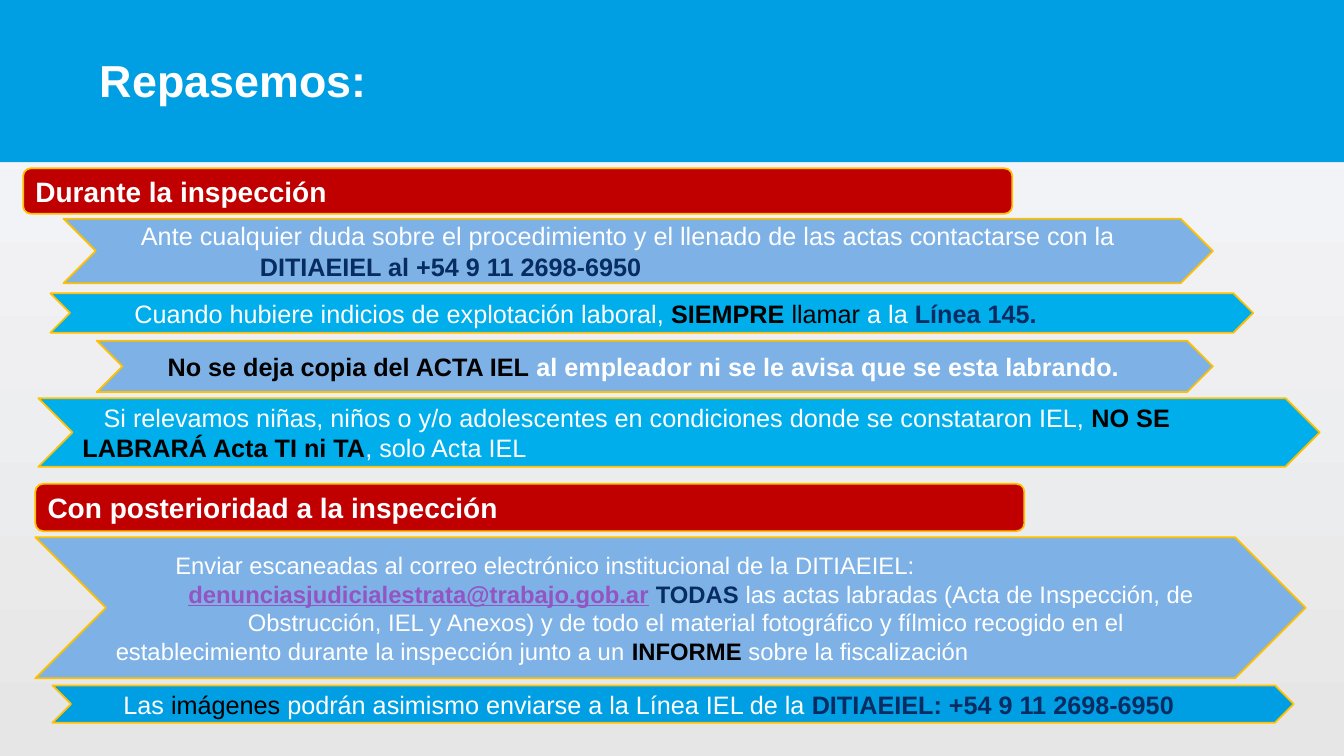
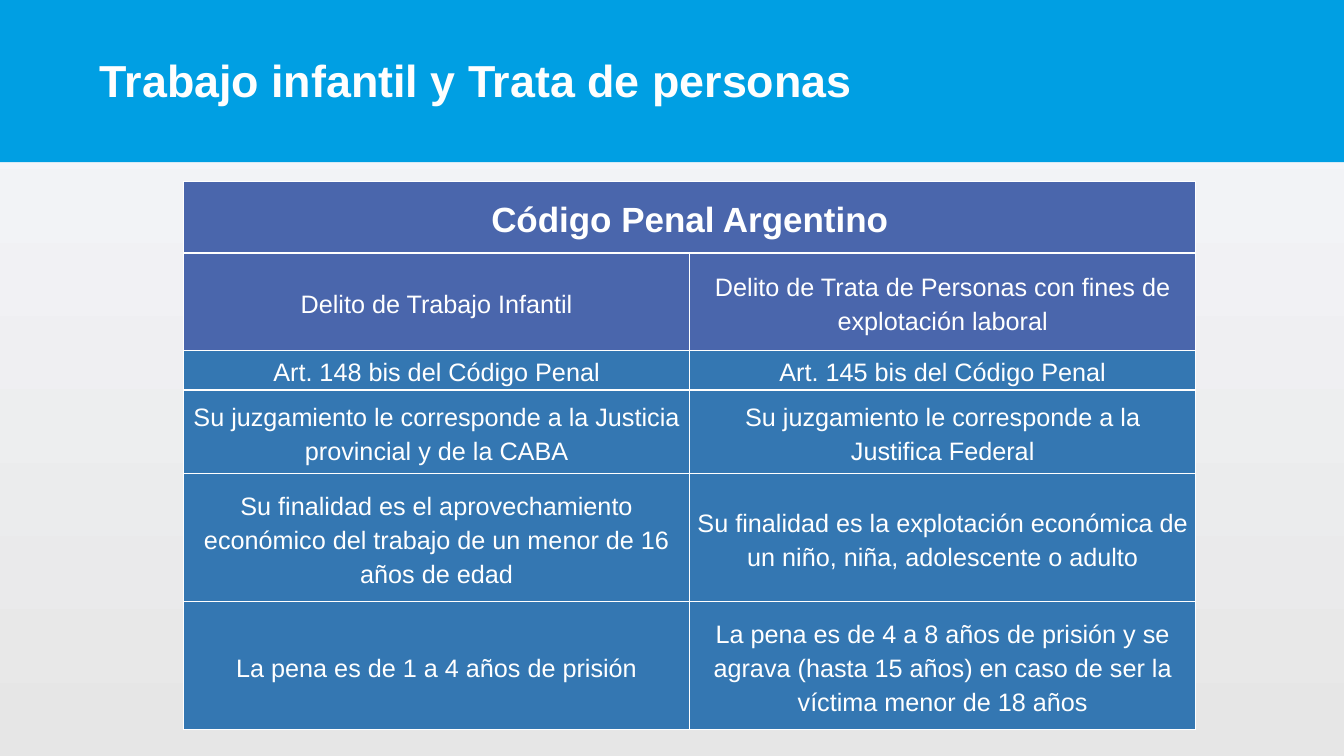
from dataclasses import dataclass

from lxml import etree
from pptx import Presentation
from pptx.dml.color import RGBColor
from pptx.enum.shapes import MSO_SHAPE
from pptx.enum.text import MSO_ANCHOR, PP_ALIGN
from pptx.oxml.ns import qn
from pptx.util import Inches, Pt

CHEVRON = MSO_SHAPE.CHEVRON
ROUNDED = MSO_SHAPE.ROUNDED_RECTANGLE
RECTANGLE = MSO_SHAPE.RECTANGLE
MIDDLE, TOP = MSO_ANCHOR.MIDDLE, MSO_ANCHOR.TOP
LEFT, CENTER = PP_ALIGN.LEFT, PP_ALIGN.CENTER


@dataclass(frozen=True)
class Theme:
    font: str = "Arial"
    # Colours
    band: str = "009FE3"
    cyan: str = "00AEEC"
    pale: str = "7EB2E6"
    red: str = "C00000"
    outline: str = "FFC000"
    white: str = "FFFFFF"
    black: str = "000000"
    navy: str = "072C62"
    link: str = "9454C3"
    title: str = "FEFEFE"
    header: str = "4A66AC"
    body: str = "3477B2"
    background: tuple = ((0.03, "F6F7FB"), (1, "E6E6E6"))
    # Type sizes and line widths in points
    title_size: int = 32
    table_title_size: int = 25
    heading_size: int = 20
    text_size: int = 18
    small_size: int = 17
    outline_width: float = 1.25
    border_width: int = 1


THEME = Theme()


@dataclass(frozen=True)
class Span:
    """A piece of text with one look."""
    text: str
    color: str = THEME.white
    bold: bool = False
    underline: bool = False


def strong(text, color=THEME.black):
    return Span(text, color, True)


def add_span(paragraph, span, size):
    run = paragraph.add_run()
    run.text = span.text
    font = run.font
    font.name, font.size = THEME.font, Pt(size)
    font.bold, font.underline = span.bold, span.underline
    font.color.rgb = RGBColor.from_string(span.color)


def paint(shape, fill, line=None):
    shape.shadow.inherit = False
    shape.fill.solid()
    shape.fill.fore_color.rgb = RGBColor.from_string(fill)
    if line is None:
        shape.line.fill.background()
    else:
        shape.line.color.rgb = RGBColor.from_string(line)
        shape.line.width = Pt(THEME.outline_width)


def add_bar(slide, kind, box, fill, size, lines):
    """Outlined bar; each line is (first-line indent in inches, spans)."""
    shape = slide.shapes.add_shape(kind, *map(Inches, box))
    paint(shape, fill, THEME.outline)
    frame = shape.text_frame
    frame.word_wrap = True
    frame.vertical_anchor = MIDDLE
    for index, (indent, spans) in enumerate(lines):
        paragraph = frame.add_paragraph() if index else frame.paragraphs[0]
        paragraph.alignment = LEFT
        paragraph._p.get_or_add_pPr().set("indent", str(Inches(indent)))
        for span in spans:
            add_span(paragraph, span, size)


def add_heading(slide, box, text):
    add_bar(slide, ROUNDED, box, THEME.red, THEME.heading_size,
            [(0, [strong(text, THEME.white)])])


def add_chevron(slide, box, fill, lines, size=THEME.text_size):
    add_bar(slide, CHEVRON, box, fill, size, lines)


def style_layout(presentation, layout):
    """Background and title position shared by all slides."""
    fill = presentation.slide_master.background.fill
    fill.gradient()
    fill.gradient_angle = 270
    for stop, (position, color) in zip(fill.gradient_stops, THEME.background):
        stop.position = position
        stop.color.rgb = RGBColor.from_string(color)
    title = layout.placeholders[0]
    title.left, title.top = Inches(0.89), Inches(0.26)
    title.width, title.height = Inches(11.56), Inches(1.06)


def add_titled_slide(presentation, layout, text):
    slide = presentation.slides.add_slide(layout)
    # Band behind the title
    band = slide.shapes.add_shape(RECTANGLE, 0, 0, presentation.slide_width, Inches(1.61))
    paint(band, THEME.band)
    slide.shapes.element.insert(2, band.element)
    # Title
    frame = slide.shapes.title.text_frame
    frame.vertical_anchor = MIDDLE
    paragraph = frame.paragraphs[0]
    paragraph.alignment = LEFT
    add_span(paragraph, strong(text, THEME.title), THEME.title_size)
    return slide


def add_during_section(slide):
    add_heading(slide, (0.23, 1.67, 9.81, 0.45), "Durante la inspección")
    add_chevron(slide, (0.63, 2.17, 11.4, 0.64), THEME.pale, [
        (0.35, [Span("Ante cualquier duda sobre el procedimiento y el llenado "
                     "de las actas contactarse con la")]),
        (1.53, [strong("DITIAEIEL al +54 9 11 2698-6950", THEME.navy)]),
    ])
    add_chevron(slide, (0.5, 2.91, 11.93, 0.39), THEME.cyan, [
        (0.54, [Span("Cuando hubiere indicios de explotación laboral, "),
                strong("SIEMPRE"), Span(" llamar", THEME.black), Span(" a la "),
                strong("Línea 145.", THEME.navy)]),
    ])
    add_chevron(slide, (0.96, 3.38, 11.07, 0.51), THEME.pale, [
        (0.35, [strong("No se deja copia del ACTA IEL"),
                strong(" al empleador ni se le avisa que se esta labrando.", THEME.white)]),
    ])
    add_chevron(slide, (0.38, 3.95, 12.71, 0.68), THEME.cyan, [
        (0.21, [Span("Si relevamos niñas, niños o y/o adolescentes en condiciones "
                     "donde se constataron IEL, "),
                strong("NO SE LABRARÁ Acta TI ni TA"), Span(", solo Acta IEL")]),
    ])


def add_after_section(slide):
    add_heading(slide, (0.35, 4.8, 9.81, 0.47), "Con posterioridad a la inspección")
    add_chevron(slide, (0.35, 5.33, 12.6, 1.4), THEME.pale, [
        (0.59, [Span("Enviar escaneadas al correo electrónico institucional de la DITIAEIEL:")]),
        (0.72, [Span("denunciasjudicialestrata@trabajo.gob.ar", THEME.link, True, True),
                strong(" TODAS", THEME.navy),
                Span(" las actas labradas (Acta de Inspección, de")]),
        (1.31, [Span("Obstrucción, IEL y Anexos) y de todo el material fotográfico y "
                     "fílmico recogido en el establecimiento durante la inspección "
                     "junto a un "),
                strong("INFORME"), Span(" sobre la fiscalización")]),
    ], THEME.small_size)
    add_chevron(slide, (0.52, 6.8, 12.31, 0.37), THEME.band, [
        (0.42, [Span("Las "), Span("imágenes", THEME.black),
                Span(" podrán asimismo enviarse a la Línea IEL de la "),
                strong("DITIAEIEL: +54 9 11 2698-6950", THEME.navy)]),
    ])


def add_borders(cell):
    properties = cell._tc.get_or_add_tcPr()
    for index, side in enumerate(("lnL", "lnR", "lnT", "lnB")):
        line = etree.Element(qn(f"a:{side}"), w=str(Pt(THEME.border_width)))
        fill = etree.SubElement(line, qn("a:solidFill"))
        etree.SubElement(fill, qn("a:srgbClr"), val=THEME.white)
        properties.insert(index, line)


def fill_cell(cell, span, size, fill, spacing, anchor):
    cell.margin_left = cell.margin_right = Inches(0.07)
    cell.margin_top = cell.margin_bottom = 0
    cell.vertical_anchor = anchor
    cell.fill.solid()
    cell.fill.fore_color.rgb = RGBColor.from_string(fill)
    add_borders(cell)
    paragraph = cell.text_frame.paragraphs[0]
    paragraph.alignment = CENTER
    paragraph.line_spacing = spacing
    if span.text:
        add_span(paragraph, span, size)


def add_comparison_table(slide, left, top, width, heading, rows, heights):
    table = slide.shapes.add_table(len(heights), 2, Inches(left), Inches(top),
                                   Inches(width), Inches(sum(heights))).table
    table.first_row = table.horz_banding = False
    for row, height in zip(table.rows, heights):
        row.height = Inches(height)
    # Merged heading
    for cell, text in zip(table.rows[0].cells, (heading, "")):
        fill_cell(cell, strong(text, THEME.white), THEME.table_title_size,
                  THEME.header, 1.5, TOP)
    table.cell(0, 0).merge(table.cell(0, 1))
    # Column heads and comparison rows
    for row_index, texts in enumerate(rows, start=1):
        fill = THEME.header if row_index == 1 else THEME.body
        for column_index, text in enumerate(texts):
            fill_cell(table.cell(row_index, column_index), Span(text),
                      THEME.text_size, fill, 1.2, MIDDLE)


def build_review_slide(presentation, layout):
    slide = add_titled_slide(presentation, layout, "Repasemos:")
    add_during_section(slide)
    add_after_section(slide)


def build_penal_code_slide(presentation, layout):
    slide = add_titled_slide(presentation, layout, "Trabajo infantil y Trata de personas")
    rows = [
        ("Delito de Trabajo Infantil",
         "Delito de Trata de Personas con fines de explotación laboral"),
        ("Art. 148 bis del Código Penal", "Art. 145 bis del Código Penal"),
        ("Su juzgamiento le corresponde a la Justicia provincial y de la CABA",
         "Su juzgamiento le corresponde a la Justifica Federal"),
        ("Su finalidad es el aprovechamiento económico del trabajo de un menor "
         "de 16 años de edad",
         "Su finalidad es la explotación económica de un niño, niña, "
         "adolescente o adulto"),
        ("La pena es de 1 a 4 años de prisión",
         "La pena es de 4 a 8 años de prisión y se agrava (hasta 15 años) "
         "en caso de ser la víctima menor de 18 años"),
    ]
    add_comparison_table(slide, 1.82, 1.8, 10.04, "Código Penal Argentino", rows,
                         (0.71, 0.97, 0.39, 0.83, 1.27, 1.27))


def main():
    presentation = Presentation()
    presentation.slide_width, presentation.slide_height = Inches(13.33), Inches(7.5)
    layout = presentation.slide_layouts[5]
    style_layout(presentation, layout)
    build_review_slide(presentation, layout)
    build_penal_code_slide(presentation, layout)
    presentation.save("out.pptx")


if __name__ == "__main__":
    main()
